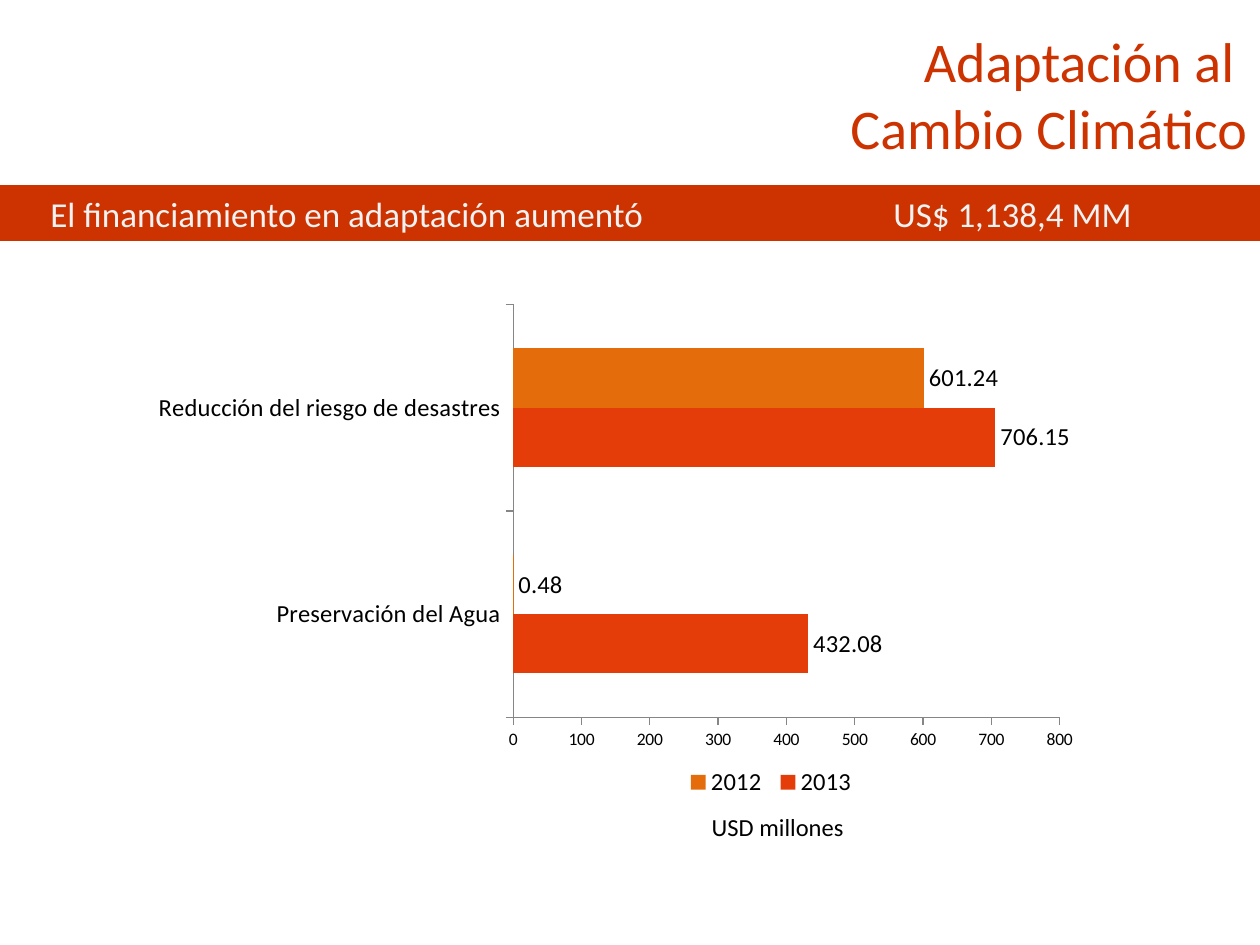
from dataclasses import dataclass

from lxml import etree
from pptx import Presentation
from pptx import util as u
from pptx.chart.data import CategoryChartData
from pptx.dml.color import RGBColor
from pptx.enum import chart as charts, shapes, text
from pptx.oxml import ns

WIDTH, HEIGHT = u.Inches(10), u.Inches(7.5)


@dataclass(frozen=True)
class Theme:
    font: str = "Calibri"
    brand: str = "CC3300"
    pale: str = "F2F2F2"
    ink: str = "000000"
    axis: str = "868686"
    title: int = 32
    band: int = 20
    label: int = 14
    tick: int = 10


@dataclass(frozen=True)
class Area:
    """Left, top, width and height as shares of the containing surface."""
    left: float
    top: float
    width: float
    height: float

    def on_slide(self) -> tuple[int, int, int, int]:
        return (int(self.left * WIDTH), int(self.top * HEIGHT),
                int(self.width * WIDTH), int(self.height * HEIGHT))


@dataclass(frozen=True)
class YearSeries:
    name: str
    values: tuple[float, ...]
    color: str


THEME = Theme()
TITLE_AREA = Area(0.169, 0.021, 0.831, 0.157)
BAND_AREA = Area(0, 0.196, 1, 0.059)
UNIT_AREA = Area(0.555, 0.853, 0.147, 0.045)
CHART_AREA = Area(0.106, 0.311, 0.761, 0.547)
PLOT_AREA = Area(0.396, 0.02, 0.57, 0.8)
LEGEND_AREA = Area(0.57, 0.91, 0.19, 0.07)
CATEGORIES = ("Preservación del Agua", "Reducción del riesgo de desastres")
YEARS = (
    YearSeries("2013", (432.08, 706.15), "E53D09"),
    YearSeries("2012", (0.48, 601.24), "E46C0A"),
)


def format_font(font, size: int, color: str = THEME.ink) -> None:
    font.name = THEME.font
    font.size = u.Pt(size)
    font.color.rgb = RGBColor.from_string(color)


def write(frame, content: str, *, size: int, color: str = THEME.ink,
          align=text.PP_ALIGN.LEFT, anchor=text.MSO_ANCHOR.TOP,
          wrap: bool = True, tab: float = 0) -> None:
    frame.word_wrap = wrap
    frame.auto_size = text.MSO_AUTO_SIZE.NONE
    frame.vertical_anchor = anchor
    frame.text = content
    for para in frame.paragraphs:
        para.alignment = align
        para.space_before = u.Pt(0)
        if tab:
            properties = para._p.get_or_add_pPr()
            stops = etree.SubElement(properties, ns.qn("a:tabLst"))
            etree.SubElement(stops, ns.qn("a:tab"),
                             pos=str(u.Inches(tab)), algn="l")
        for span in para.runs:
            format_font(span.font, size, color)


def place_in_chart(element, area: Area, index: int, inner: bool = False) -> None:
    for old in element.findall(ns.qn("c:layout")):
        element.remove(old)
    layout = etree.Element(ns.qn("c:layout"))
    manual = etree.SubElement(layout, ns.qn("c:manualLayout"))
    settings = [("layoutTarget", "inner")] if inner else []
    settings += [("xMode", "edge"), ("yMode", "edge"),
                 ("x", area.left), ("y", area.top),
                 ("w", area.width), ("h", area.height)]
    for tag, value in settings:
        etree.SubElement(manual, ns.qn(f"c:{tag}"), val=str(value))
    element.insert(index, layout)


def format_axis(axis, size: int) -> None:
    axis.has_major_gridlines = False
    axis.major_tick_mark = charts.XL_TICK_MARK.OUTSIDE
    axis.minor_tick_mark = charts.XL_TICK_MARK.NONE
    axis.format.line.color.rgb = RGBColor.from_string(THEME.axis)
    axis.format.line.width = u.Pt(0.75)
    format_font(axis.tick_labels.font, size)


def add_funding_chart(page) -> None:
    data = CategoryChartData(number_format="0.00")
    data.categories = CATEGORIES
    for year in YEARS:
        data.add_series(year.name, year.values)
    chart = page.shapes.add_chart(charts.XL_CHART_TYPE.BAR_CLUSTERED,
                                  *CHART_AREA.on_slide(), data).chart
    format_font(chart.font, THEME.tick)
    chart.has_title = False
    chart.has_legend = True
    chart.legend.position = charts.XL_LEGEND_POSITION.BOTTOM
    chart.legend.include_in_layout = False
    format_font(chart.legend.font, THEME.label)

    format_axis(chart.category_axis, THEME.label)
    format_axis(chart.value_axis, THEME.tick)
    chart.value_axis.minimum_scale = 0
    chart.value_axis.maximum_scale = 800
    chart.value_axis.major_unit = 100
    chart.value_axis.tick_labels.number_format = "0"
    chart.value_axis.tick_labels.number_format_is_linked = False

    plot = chart.plots[0]
    plot.vary_by_categories = False
    plot.gap_width = 150
    plot.overlap = 0
    for year, series in zip(YEARS, plot.series):
        series.format.fill.solid()
        series.format.fill.fore_color.rgb = RGBColor.from_string(year.color)
        labels = series.data_labels
        labels.show_value = True
        labels.number_format = "0.00"
        labels.number_format_is_linked = False
        labels.position = charts.XL_LABEL_POSITION.OUTSIDE_END
        format_font(labels.font, THEME.label)

    plot_area = chart._chartSpace.chart.plotArea
    place_in_chart(plot_area, PLOT_AREA, 0, inner=True)
    place_in_chart(chart.legend._element, LEGEND_AREA, 1)


def add_band(page) -> None:
    band = page.shapes.add_shape(shapes.MSO_SHAPE.RECTANGLE, *BAND_AREA.on_slide())
    band.shadow.inherit = False
    band.fill.solid()
    band.fill.fore_color.rgb = RGBColor.from_string(THEME.brand)
    band.line.fill.background()
    band.text_frame.margin_left = u.Inches(0.4)
    write(band.text_frame, "El financiamiento en adaptación aumentó\tUS$ 1,138,4 MM",
          size=THEME.band, color=THEME.pale,
          anchor=text.MSO_ANCHOR.MIDDLE, tab=6.69)


def main() -> None:
    """Build the slide on climate adaptation funding."""
    deck = Presentation()
    deck.slide_width, deck.slide_height = WIDTH, HEIGHT
    page = deck.slides.add_slide(deck.slide_layouts[5])

    title = page.shapes.title
    title.left, title.top, title.width, title.height = TITLE_AREA.on_slide()
    write(title.text_frame, "Adaptación al \nCambio Climático", size=THEME.title,
          color=THEME.brand, align=text.PP_ALIGN.RIGHT)

    unit = page.shapes.add_textbox(*UNIT_AREA.on_slide())
    write(unit.text_frame, "USD millones", size=THEME.label, wrap=False)

    add_funding_chart(page)
    add_band(page)
    deck.save("out.pptx")


if __name__ == "__main__":
    main()
